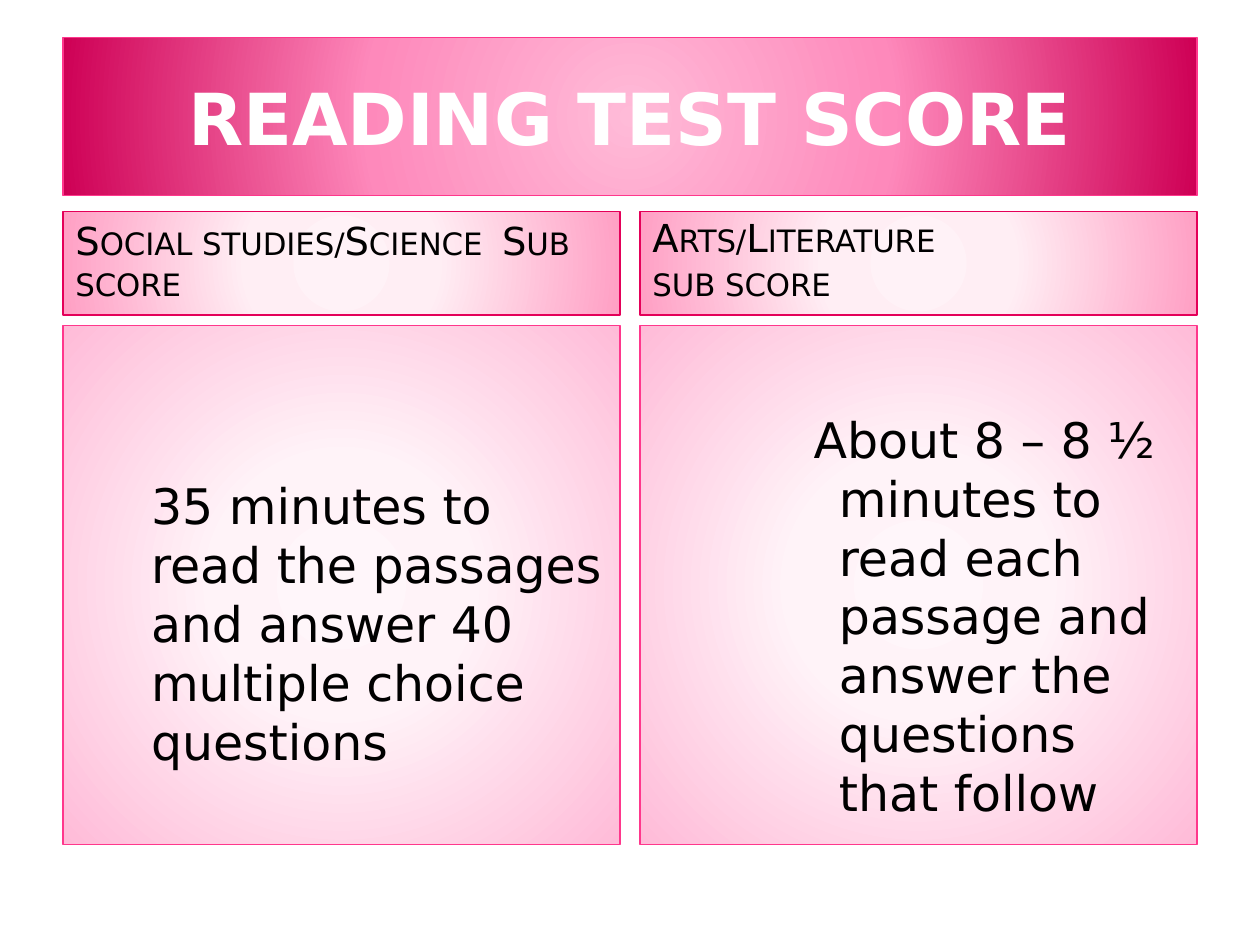
"""Build the reading test score slide: a title over two headed columns."""
import pptx
import pptx.util
import pptx.dml.color
import pptx.enum.shapes
import pptx.enum.text
import pptx.oxml
import pptx.oxml.ns

Pt = pptx.util.Pt
RGB = pptx.dml.color.RGBColor.from_string
ANCHOR = pptx.enum.text.MSO_ANCHOR
ALIGN = pptx.enum.text.PP_ALIGN
qn = pptx.oxml.ns.qn

FONT = "DejaVu Sans"
COLORS = {"white": "FFFFFF", "black": "000000", "pink": "FF378C", "crimson": "E40059"}
GRADIENTS = {
    "title": [(0, "FFBBD8"), (46, "FE89BB"), (100, "CE0055")],
    "heading": [(0, "FFF2F7"), (34, "FFEEF4"), (100, "FF9FC4")],
    "body": [(0, "FFF6FA"), (34, "FFF3F8"), (100, "FFBBD8")],
}


def style_panel(s, gradient, line, anchor, top=3.6):
    """Give a panel its radial fill, outline and text frame settings."""
    s.shadow.inherit = False
    s.fill.gradient()
    stops = "".join(
        f'<a:gs pos="{pos * 1000}"><a:srgbClr val="{color}"/></a:gs>'
        for pos, color in GRADIENTS[gradient]
    )
    old = s.element.spPr.find(qn("a:gradFill"))
    new = pptx.oxml.parse_xml(
        '<a:gradFill xmlns:a="http://schemas.openxmlformats.org/drawingml/2006/main"'
        f' rotWithShape="1"><a:gsLst>{stops}</a:gsLst><a:path path="circle">'
        '<a:fillToRect l="50000" t="50000" r="50000" b="50000"/></a:path></a:gradFill>'
    )
    old.getparent().replace(old, new)
    s.line.color.rgb = RGB(COLORS[line])
    s.line.width = Pt(0.75)
    tf = s.text_frame
    tf.word_wrap = True
    tf.auto_size = pptx.enum.text.MSO_AUTO_SIZE.NONE
    tf.vertical_anchor = anchor
    tf.margin_left = tf.margin_right = Pt(7.2)
    tf.margin_top, tf.margin_bottom = Pt(top), Pt(3.6)
    return tf


def style_paragraph(p, size, color, align):
    """Set the font and alignment of a paragraph."""
    p.alignment = align
    p.font.name = FONT
    p.font.size = Pt(size)
    p.font.color.rgb = RGB(COLORS[color])


prs = pptx.Presentation()
prs.slide_width, prs.slide_height = Pt(720), Pt(540)
slide = prs.slides.add_slide(prs.slide_layouts[5])

title = slide.shapes.title
title.left, title.top, title.width, title.height = Pt(36), Pt(21.6), Pt(648), Pt(90)
tf = style_panel(title, "title", "pink", ANCHOR.MIDDLE)
tf.text = "READING TEST SCORE"
p = tf.paragraphs[0]
style_paragraph(p, 41, "white", ALIGN.CENTER)
p.font.bold = True

columns = [
    (["Social studies/Science  Sub score"], 0.9,
     "35 minutes to read the passages and answer 40 multiple choice questions",
     86, 43.2, 0),
    (["Arts/Literature", "sub score"], 0.8,
     "About 8 – 8 ½ minutes to read each passage and answer the questions that follow",
     48, 106.56, -14.4),
]
for i, (heading, spacing, body, top, margin, indent) in enumerate(columns):
    left = Pt(36 + i * 329.76)
    s = slide.shapes.add_shape(
        pptx.enum.shapes.MSO_SHAPE.RECTANGLE, left, Pt(121), Pt(318.24), Pt(59)
    )
    tf = style_panel(s, "heading", "crimson", ANCHOR.MIDDLE)
    tf.text = "\n".join(heading)
    for n, p in enumerate(tf.paragraphs):
        style_paragraph(p, 22, "black", ALIGN.LEFT)
        p.line_spacing = spacing
        p.space_before = Pt(4.4 * n)
        p.runs[0].font._element.set("cap", "small")

    s = slide.shapes.add_shape(
        pptx.enum.shapes.MSO_SHAPE.RECTANGLE, left, Pt(186), Pt(318.24), Pt(296.5)
    )
    tf = style_panel(s, "body", "pink", ANCHOR.TOP, top)
    tf.text = body
    p = tf.paragraphs[0]
    style_paragraph(p, 28, "black", ALIGN.LEFT)
    pPr = p._p.get_or_add_pPr()
    pPr.set("marL", str(Pt(margin)))
    pPr.set("indent", str(Pt(indent)))

prs.save("out.pptx")
